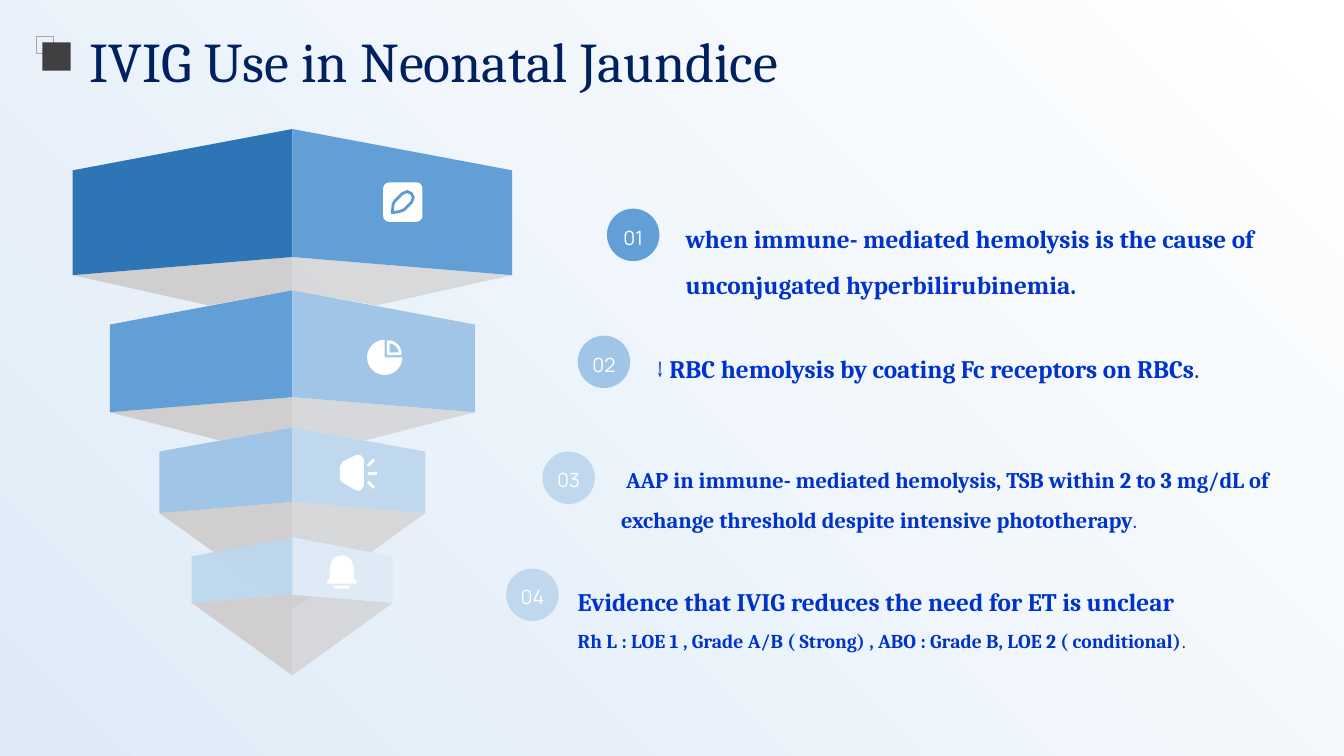
import math

import pptx
import pptx.util
import pptx.dml.color
import pptx.enum.shapes
import pptx.enum.text
import pptx.oxml.ns
from lxml import etree

Inches = pptx.util.Inches
SHAPE = pptx.enum.shapes.MSO_SHAPE
ALIGN = pptx.enum.text.PP_ALIGN
ANCHOR = pptx.enum.text.MSO_ANCHOR
qn = pptx.oxml.ns.qn

COLORS = {"white": "FFFFFF", "pale": "DEEBF7", "light": "BDD7EE", "sky": "9DC3E6",
          "blue": "5B9BD5", "deep": "2E75B6", "shade": "D0CECE", "dark": "404040",
          "outline": "A6A6A6", "navy": "002060", "text": "0033CC"}

TITLE = "IVIG Use in Neonatal Jaundice"

# Badge: number, left, top, color
BADGES = [("01", 6.02, 2.07, "blue"), ("02", 5.73, 3.33, "sky"),
          ("03", 5.38, 4.48, "light"), ("04", 5.02, 5.64, "light")]

# Point: box, first-line indent, paragraphs of runs (text, size, color, bold)
POINTS = [
    ((6.8, 2.07, 6.06, 0.85), 0,
     [[("when immune- mediated hemolysis is the cause of unconjugated "
        "hyperbilirubinemia.", 18, "text", True)]]),
    ((6.51, 3.35, 6.82, 0.71), 0,
     [[("↓ RBC hemolysis by coating Fc receptors on RBCs", 18, "text", True),
       (".", 14, "dark", True)]]),
    ((6.16, 4.49, 6.84, 0.71), 0.05,
     [[("AAP in immune- mediated hemolysis, TSB within 2 to 3 mg/dL of "
        "exchange threshold despite intensive phototherapy", 16, "text", True),
       (".", 11, "text", True)]]),
    ((5.73, 5.67, 6.68, 0.98), 0,
     [[("Evidence that IVIG reduces the need for ET is unclear", 18, "text", True)],
      [("Rh L : LOE 1 , Grade A/B ( Strong) , ABO : Grade B, LOE 2 ( conditional)",
        14, "text", True), (".", 14, "dark", False)]]),
]

# Funnel tier: half width, top, shoulder, fold, base, lower edge of the underside
CENTER = 2.9
TIERS = [(2.18, 1.28, 1.69, 2.55, 2.73, [(0, 2.88), (0.83, 3.03)]),
         (1.81, 2.88, 3.22, 3.94, 4.09, [(0, 4.24), (0.72, 4.37)]),
         (1.32, 4.24, 4.48, 4.98, 5.09, [(0, 6.04)]),
         (1.0, 5.33, 5.52, 5.9, 5.98, [(0, 6.7)])]
TIER_COLORS = ["deep", "blue", "sky", "light", "pale"]

# Icon outlines
PENCIL = [(4.04, 1.9), (4.08, 1.92), (4.1, 1.96), (4.08, 2.01), (4.01, 2.08), (3.96, 2.1),
          (3.89, 2.11), (3.9, 2.02), (3.92, 1.99), (3.99, 1.92)]
HORN = [(3.55, 4.51), (3.58, 4.52), (3.6, 4.54), (3.61, 4.57), (3.61, 4.81), (3.6, 4.84),
        (3.58, 4.86), (3.55, 4.87), (3.52, 4.86), (3.4, 4.79), (3.38, 4.77), (3.37, 4.74),
        (3.37, 4.64), (3.38, 4.61), (3.4, 4.58), (3.52, 4.52)]
RAYS = [(3.65, 4.62, 3.71, 4.56), (3.65, 4.7, 3.74, 4.7), (3.65, 4.78, 3.71, 4.84)]
BELL_CENTER = 3.39
BELL_HALF = [(0, 5.51), (0.05, 5.52), (0.09, 5.55), (0.11, 5.59), (0.12, 5.64),
             (0.12, 5.73), (0.15, 5.78), (0.14, 5.79)]

presentation = pptx.Presentation()
presentation.slide_width = Inches(13.33)
presentation.slide_height = Inches(7.5)
slide = presentation.slides.add_slide(presentation.slide_layouts[5])


def rgb(name):
    return pptx.dml.color.RGBColor.from_string(COLORS[name])


def style(shape, fill=None, line=None, width=1, opacity=100):
    shape.shadow.inherit = False
    if fill:
        shape.fill.solid()
        shape.fill.fore_color.rgb = rgb(fill)
        if opacity < 100:
            color = shape.element.spPr.find(qn("a:solidFill"))[0]
            etree.SubElement(color, qn("a:alpha")).set("val", str(opacity * 1000))
    else:
        shape.fill.background()
    if line:
        shape.line.color.rgb = rgb(line)
        shape.line.width = pptx.util.Pt(width)
    else:
        shape.line.fill.background()
    return shape


def add_preset(kind, box, **look):
    return style(slide.shapes.add_shape(kind, *map(Inches, box)), **look)


def add_polygon(points, **look):
    corners = [(Inches(x), Inches(y)) for x, y in points]
    builder = slide.shapes.build_freeform(*corners[0])
    builder.add_line_segments(corners[1:], close=True)
    return style(builder.convert_to_shape(), **look)


def write(paragraph, text, size=14, font="Cambria", color="text", bold=False,
          spacing=1.5, align=ALIGN.LEFT):
    paragraph.alignment = align
    paragraph.line_spacing = spacing
    run = paragraph.add_run()
    run.text = text
    run.font.size = pptx.util.Pt(size)
    run.font.name = font
    run.font.bold = bold
    run.font.color.rgb = rgb(color)


def clear_margins(frame, anchor=ANCHOR.TOP):
    frame.word_wrap = True
    frame.vertical_anchor = anchor
    frame.margin_left = frame.margin_right = frame.margin_top = frame.margin_bottom = 0


# Background
backdrop = add_preset(SHAPE.RECTANGLE, (0, 0, 13.33, 7.5))
backdrop.fill.gradient()
backdrop.fill.gradient_angle = 225
for stop, name in zip(backdrop.fill.gradient_stops, ("white", "pale")):
    stop.color.rgb = rgb(name)
slide.shapes.element.insert(2, backdrop.element)

# Title with its square mark
title = slide.shapes.title
title.left, title.top, title.width, title.height = map(Inches, (0.89, 0.29, 11.9, 0.47))
clear_margins(title.text_frame, ANCHOR.MIDDLE)
title.text_frame.auto_size = pptx.enum.text.MSO_AUTO_SIZE.NONE
write(title.text_frame.paragraphs[0], TITLE, size=40, color="navy", spacing=1.2)
add_preset(SHAPE.RECTANGLE, (0.36, 0.36, 0.17, 0.17), line="outline")
add_preset(SHAPE.RECTANGLE, (0.42, 0.42, 0.28, 0.28), fill="dark")

# Funnel: each tier has a left and a right face and underside
for index, (half, top, shoulder, fold, base, lower) in enumerate(TIERS):
    face = [(0, top), (0, fold), (half, base), (half, shoulder)]
    underside = [(half, base), (0, fold)] + lower
    for side, color, shade_opacity in ((-1, TIER_COLORS[index], 100),
                                       (1, TIER_COLORS[index + 1], 70)):
        add_polygon([(CENTER + side * x, y) for x, y in underside],
                    fill="shade", opacity=shade_opacity)
        add_polygon([(CENTER + side * x, y) for x, y in face],
                    fill=color, opacity=100 if color == "deep" else 95)

# Pencil icon
tile = add_preset(SHAPE.ROUNDED_RECTANGLE, (3.8, 1.81, 0.39, 0.39), fill="white")
tile.adjustments[0] = 0.15
add_polygon(PENCIL, line="blue", width=2)

# Pie icon
add_preset(SHAPE.PIE, (3.64, 3.37, 0.35, 0.35), fill="white")
slice_corner = (3.85, 3.51)
arc = [(slice_corner[0] + 0.12 * math.cos(math.radians(angle)),
        slice_corner[1] - 0.12 * math.sin(math.radians(angle))) for angle in range(0, 91, 10)]
add_polygon([slice_corner] + arc, line="white", width=2)

# Horn icon
add_polygon(HORN, fill="white")
for ray in RAYS:
    connector = slide.shapes.add_connector(
        pptx.enum.shapes.MSO_CONNECTOR.STRAIGHT, *map(Inches, ray))
    connector.line.color.rgb = rgb("white")
    connector.line.width = pptx.util.Pt(2)
    etree.SubElement(connector.element.spPr, qn("a:effectLst"))

# Bell icon
add_polygon([(BELL_CENTER + x, y) for x, y in BELL_HALF]
            + [(BELL_CENTER - x, y) for x, y in reversed(BELL_HALF[1:])], fill="white")
clapper = add_preset(SHAPE.ROUNDED_RECTANGLE, (3.31, 5.81, 0.16, 0.03), fill="white")
clapper.adjustments[0] = 0.5

# Numbered badges
for number, left, top, color in BADGES:
    badge = add_preset(SHAPE.OVAL, (left, top, 0.52, 0.52), fill=color, opacity=95)
    clear_margins(badge.text_frame, ANCHOR.MIDDLE)
    write(badge.text_frame.paragraphs[0], number, font="Manrope", color="white",
          spacing=1.2, align=ALIGN.CENTER)

# Points
for box, indent, paragraphs in POINTS:
    frame = slide.shapes.add_textbox(*map(Inches, box)).text_frame
    clear_margins(frame)
    for index, runs in enumerate(paragraphs):
        paragraph = frame.add_paragraph() if index else frame.paragraphs[0]
        for text, size, color, bold in runs:
            write(paragraph, text, size=size, color=color, bold=bold)
        if indent:
            paragraph._p.get_or_add_pPr().set("indent", str(Inches(indent)))

presentation.save("out.pptx")
